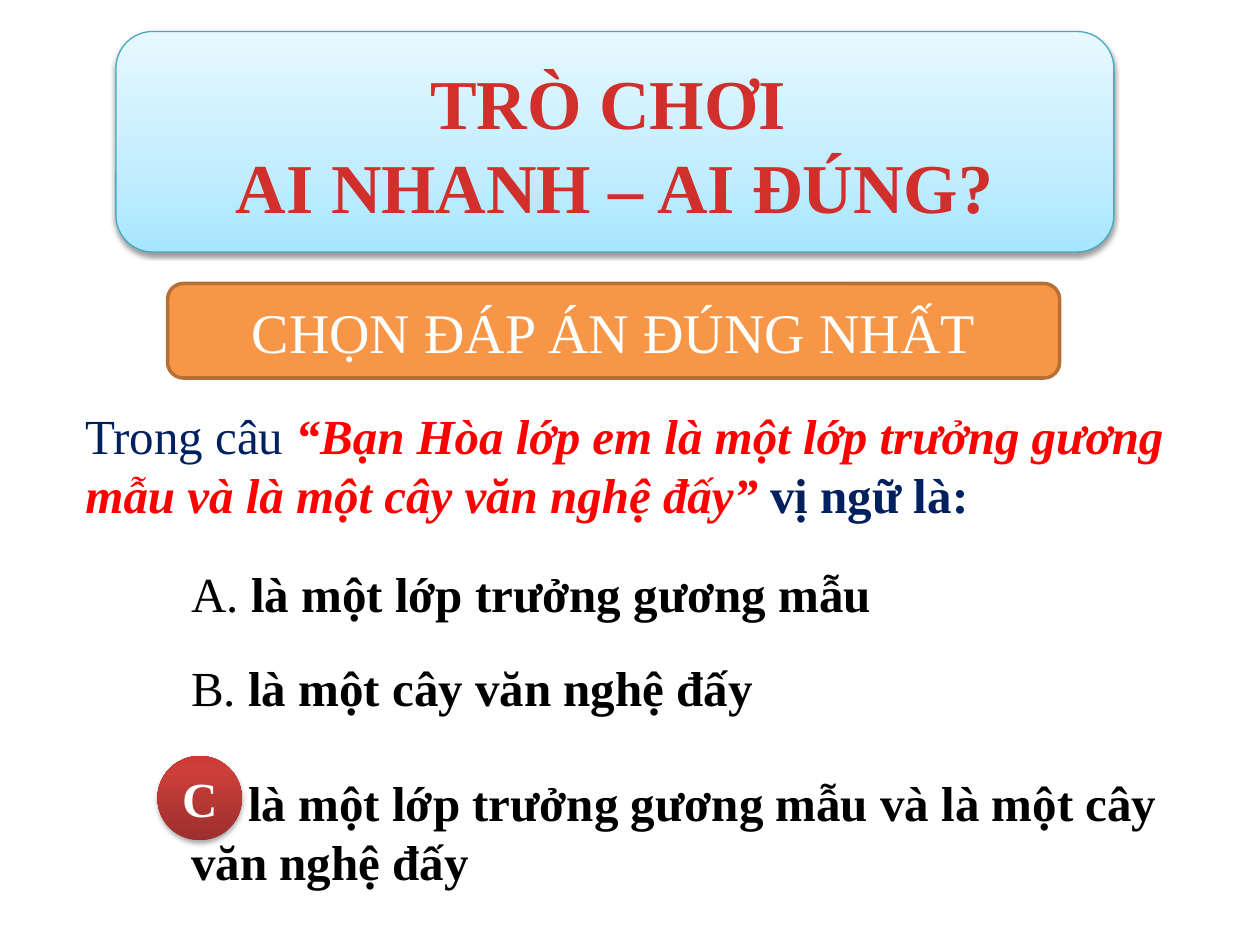
from lxml import etree
from pptx import Presentation
from pptx.dml.color import RGBColor
from pptx.enum.shapes import MSO_SHAPE
from pptx.enum.text import MSO_ANCHOR, PP_ALIGN
from pptx.oxml.ns import qn
from pptx.util import Inches, Pt

ROUND = MSO_SHAPE.ROUNDED_RECTANGLE
OVAL = MSO_SHAPE.OVAL
MIDDLE = MSO_ANCHOR.MIDDLE
CENTER = PP_ALIGN.CENTER
LEFT = PP_ALIGN.LEFT

FONT = "Times New Roman"
BLACK, WHITE, NAVY, RED, BRICK = "000000", "FFFFFF", "002060", "FF0000", "D02F2C"


def color(code):
    return RGBColor.from_string(code)


def write(frame, lines, size, align=LEFT):
    """Each line is a list of runs: text, colour, bold, italic."""
    frame.word_wrap = True
    for i, line in enumerate(lines):
        para = frame.paragraphs[0] if i == 0 else frame.add_paragraph()
        para.alignment = align
        for text, code, bold, italic in line:
            run = para.add_run()
            run.text = text
            font = run.font
            font.name, font.size = FONT, Pt(size)
            font.bold, font.italic = bold, italic
            font.color.rgb = color(code)


def add_text(slide, box, lines, size=28, align=LEFT):
    area = slide.shapes.add_textbox(*map(Inches, box))
    write(area.text_frame, lines, size, align)


def add_panel(slide, kind, box, fill=None, line=None, width=1):
    panel = slide.shapes.add_shape(kind, *map(Inches, box))
    panel.shadow.inherit = False
    panel.text_frame.vertical_anchor = MIDDLE
    if fill:
        panel.fill.solid()
        panel.fill.fore_color.rgb = color(fill)
    if line:
        panel.line.color.rgb = color(line)
        panel.line.width = Pt(width)
    else:
        panel.line.fill.background()
    return panel


def add_node(parent, tag, **attrs):
    return etree.SubElement(parent, qn(tag), {k: str(v) for k, v in attrs.items()})


def shade(panel, stops):
    """Fill from bottom to top with (percent, colour) stops."""
    panel.fill.gradient()
    panel.fill.gradient_angle = 90
    holder = panel.fill.gradient_stops[0]._gs.getparent()
    for old in list(holder):
        holder.remove(old)
    for place, code in stops:
        stop = add_node(holder, "a:gs", pos=place * 1000)
        add_node(stop, "a:srgbClr", val=code)


def cast(panel, alpha, dist):
    """Drop a soft black shadow below the panel."""
    effects = panel._element.spPr.find(qn("a:effectLst"))
    drop = add_node(effects, "a:outerShdw", blurRad=Pt(3.1), dist=Pt(dist),
                    dir=5400000, rotWithShape=0)
    tint = add_node(drop, "a:srgbClr", val=BLACK)
    add_node(tint, "a:alpha", val=alpha * 1000)


def add_choice(slide, box, mark, answer):
    add_text(slide, box, [[(mark, BLACK, False, False), (answer, BLACK, True, False)]])


def add_title(slide):
    panel = add_panel(slide, ROUND, (0.92, 0.25, 7.92, 1.75), line="46AAC5", width=0.75)
    shade(panel, [(0, "A7E6FF"), (35, "C1EDFF"), (100, "E7F8FF")])
    cast(panel, 38, 1.6)
    lines = [[(text, BRICK, True, False)] for text in ("TRÒ CHƠI", " AI NHANH – AI ĐÚNG?")]
    add_text(slide, (1.17, 0.42, 7.31, 1.45), lines, 40, CENTER)


def add_badge(slide):
    badge = add_panel(slide, OVAL, (1.25, 6, 0.67, 0.67))
    shade(badge, [(0, "9C2F2D"), (80, "CB3E3A"), (100, "CE3B37")])
    cast(badge, 35, 1.8)
    write(badge.text_frame, [[("C", WHITE, True, False)]], 28, CENTER)


def main():
    deck = Presentation()
    deck.slide_width, deck.slide_height = Inches(10), Inches(7.5)
    slide = deck.slides.add_slide(deck.slide_layouts[6])

    add_title(slide)
    add_choice(slide, (1.42, 6.08, 8.17, 1.04), "C. ",
               "là một lớp trưởng gương mẫu và là một cây văn nghệ đấy")
    prompt = add_panel(slide, ROUND, (1.33, 2.25, 7.08, 0.75), "F79646", "B76F34", 2)
    write(prompt.text_frame, [[("CHỌN ĐÁP ÁN ĐÚNG NHẤT", WHITE, False, False)]], 32, CENTER)
    add_text(slide, (0.58, 3.17, 9.08, 1.04), [[
        ("Trong câu ", NAVY, False, False),
        ("“Bạn Hòa lớp em là một lớp trưởng gương mẫu và là một cây văn nghệ đấy” ",
         RED, True, True),
        ("vị ngữ là:", NAVY, True, False),
    ]])
    add_choice(slide, (1.42, 4.42, 5.67, 1.51), "A. ", "là một lớp trưởng gương mẫu")
    add_choice(slide, (1.42, 5.17, 7.17, 1.51), "B. ", "là một cây văn nghệ đấy")
    add_badge(slide)

    deck.save("out.pptx")


if __name__ == "__main__":
    main()
